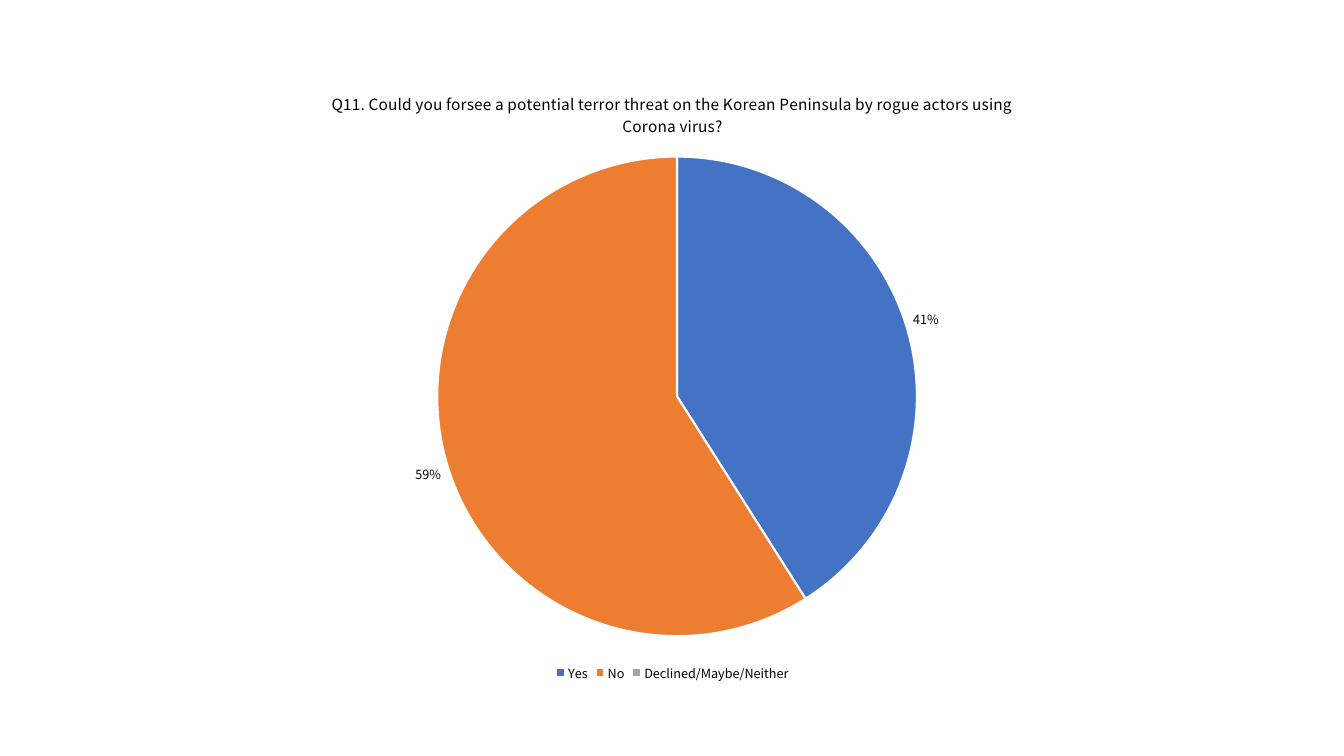
from lxml.etree import SubElement
from pptx import Presentation
from pptx.chart.data import CategoryChartData
from pptx.dml.color import RGBColor
from pptx.enum.chart import XL_CHART_TYPE, XL_LABEL_POSITION, XL_LEGEND_POSITION
from pptx.oxml import parse_xml
from pptx.oxml.ns import nsdecls, qn
from pptx.util import Inches, Pt

FONT = "Noto Sans CJK KR"
QUESTION = ("Q11. Could you forsee a potential terror threat on the Korean "
            "Peninsula by rogue actors using Corona virus?")
# Answer, share, slice colour
ANSWERS = [
    ("Yes", 0.41, "4472C4"),
    ("No", 0.59, "ED7D31"),
    ("Declined/Maybe/Neither", 0, "A5A5A5"),
]
# Left, top, width and height of the pie as shares of the chart
PIE_SHARE = {"x": 0.24, "y": 0.14, "w": 0.53, "h": 0.78}


def color(hex_value):
    return RGBColor.from_string(hex_value)


def format_font(font, size=9, hex_value="000000"):
    font.name = FONT
    font.size = Pt(size)
    font.bold = False
    font.color.rgb = color(hex_value)


def set_title(text_frame, text, **font_format):
    text_frame.text = text
    format_font(text_frame.paragraphs[0].runs[0].font, **font_format)


def place_pie(chart):
    plot_area = chart.plots[0]._element.getparent()
    for old_layout in plot_area.findall(qn("c:layout")):
        plot_area.remove(old_layout)
    layout = parse_xml(f"<c:layout {nsdecls('c')}/>")
    manual = SubElement(layout, qn("c:manualLayout"))
    settings = {"layoutTarget": "inner", "xMode": "edge", "yMode": "edge", **PIE_SHARE}
    for name, value in settings.items():
        SubElement(manual, qn(f"c:{name}")).set("val", str(value))
    plot_area.insert(0, layout)


def hide_label(labels, index):
    labels._element.insert(0, parse_xml(
        f'<c:dLbl {nsdecls("c")}><c:idx val="{index}"/><c:delete val="1"/></c:dLbl>'))


def add_answer_pie(slide, left, top, width, height):
    data = CategoryChartData(number_format="0%")
    data.categories = [answer for answer, _, _ in ANSWERS]
    data.add_series(QUESTION, [share for _, share, _ in ANSWERS])
    chart = slide.shapes.add_chart(
        XL_CHART_TYPE.PIE, left, top, width, height, data).chart
    format_font(chart.font)

    # Title and legend
    chart.has_title = True
    set_title(chart.chart_title.text_frame, QUESTION, size=11)
    chart.chart_title.include_in_layout = False
    chart.has_legend = True
    chart.legend.position = XL_LEGEND_POSITION.BOTTOM
    chart.legend.include_in_layout = False
    format_font(chart.legend.font)

    # Slices
    plot = chart.plots[0]
    plot.vary_by_categories = True
    series = plot.series[0]
    for index, (_, _, hex_value) in enumerate(ANSWERS):
        slice_format = series.points[index].format
        slice_format.fill.solid()
        slice_format.fill.fore_color.rgb = color(hex_value)
        slice_format.line.color.rgb = color("FFFFFF")
        slice_format.line.width = Pt(1.5)

    # Percentages outside the slices, none for an empty slice
    labels = series.data_labels
    labels.show_value = True
    labels.number_format = "0%"
    labels.number_format_is_linked = False
    labels.position = XL_LABEL_POSITION.OUTSIDE_END
    format_font(labels.font)
    for index, (_, share, _) in enumerate(ANSWERS):
        if share == 0:
            hide_label(labels, index)
    place_pie(chart)


def main():
    presentation = Presentation()
    presentation.slide_width = Inches(13.33)
    presentation.slide_height = Inches(7.5)
    slide = presentation.slides.add_slide(presentation.slide_layouts[6])
    add_answer_pie(slide, Inches(2.14), Inches(0.7), Inches(9.06), Inches(6.1))
    presentation.save("out.pptx")


if __name__ == "__main__":
    main()
